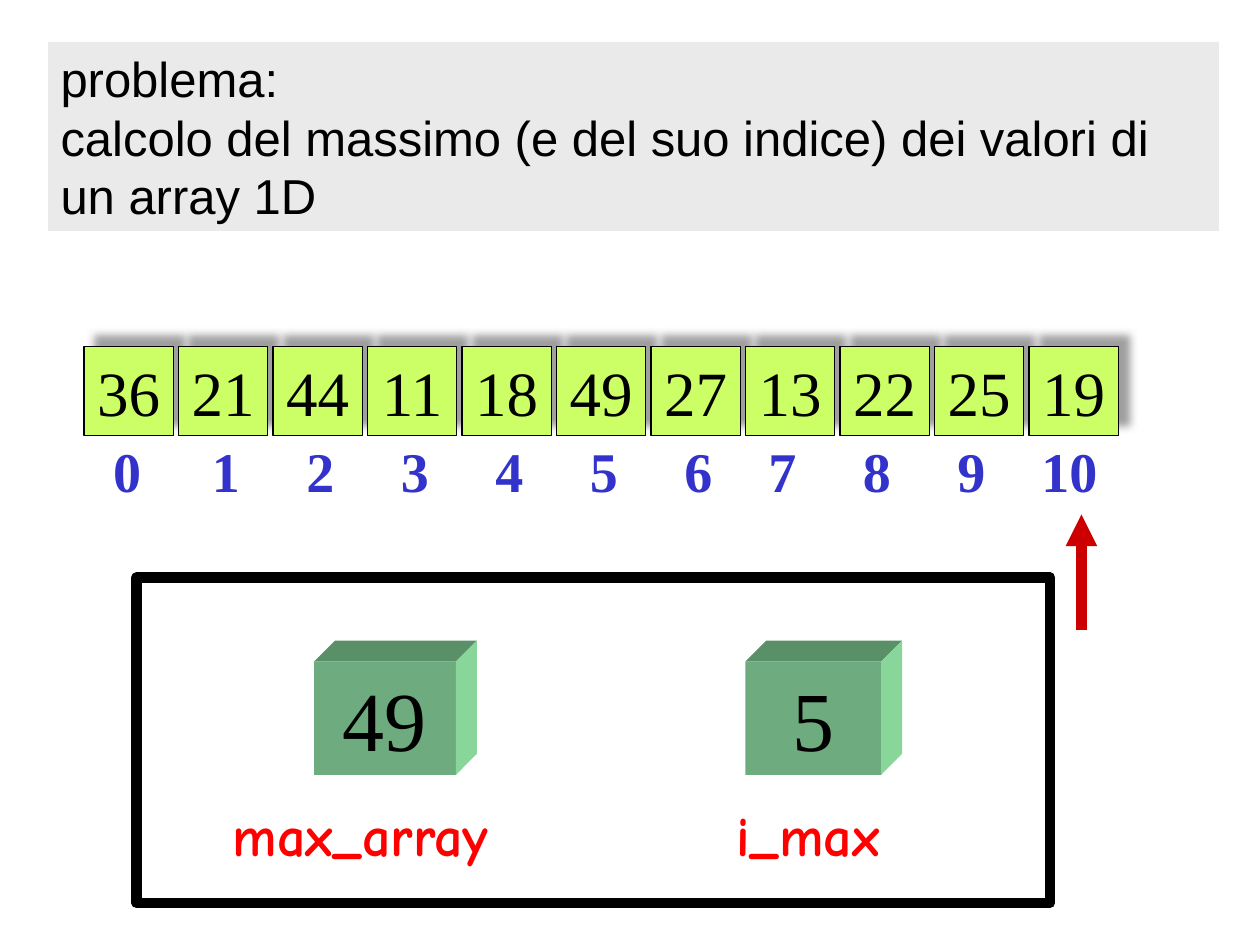
import lxml.etree
import pptx
import pptx.dml.color
import pptx.enum.shapes
import pptx.enum.text
import pptx.oxml
import pptx.oxml.ns
import pptx.util

Pt = pptx.util.Pt
RECTANGLE = pptx.enum.shapes.MSO_SHAPE.RECTANGLE
LEFT = pptx.enum.text.PP_ALIGN.LEFT
CENTER = pptx.enum.text.PP_ALIGN.CENTER
SERIF = "Times New Roman"
SHADOW = (
    '<a:effectLst xmlns:a="http://schemas.openxmlformats.org/drawingml/2006/main">'
    '<a:outerShdw blurRad="63500" dist="107950" dir="18900000" algn="ctr" rotWithShape="0">'
    '<a:srgbClr val="808080"><a:alpha val="75000"/></a:srgbClr>'
    '</a:outerShdw></a:effectLst>'
)


def color(value):
    return pptx.dml.color.RGBColor.from_string(value)


def write(shape, text, size, font, text_color, bold=False, align=LEFT, wrap=False):
    text_frame = shape.text_frame
    text_frame.text = text
    text_frame.word_wrap = wrap
    for paragraph in text_frame.paragraphs:
        paragraph.alignment = align
        for run in paragraph.runs:
            run.font.size = Pt(size)
            run.font.name = font
            run.font.bold = bold
            run.font.color.rgb = color(text_color)


presentation = pptx.Presentation()
presentation.slide_width = Pt(720)
presentation.slide_height = Pt(540)
slide = presentation.slides.add_slide(presentation.slide_layouts[6])
shapes = slide.shapes

problem = shapes.add_shape(RECTANGLE, Pt(27.5), Pt(24), Pt(669), Pt(108))
problem.shadow.inherit = False
problem.fill.solid()
problem.fill.fore_color.rgb = color("EAEAEA")
problem.line.fill.background()
write(problem, "problema:\ncalcolo del massimo (e del suo indice) dei valori di un array 1D",
      28, "Arial", "000000", wrap=True)

values = [36, 21, 44, 11, 18, 49, 27, 13, 22, 25, 19]
for index, value in enumerate(values):
    cell = shapes.add_shape(RECTANGLE, Pt(48 + 54 * index), Pt(198), Pt(51), Pt(51))
    cell.fill.solid()
    cell.fill.fore_color.rgb = color("CCFF66")
    cell.line.color.rgb = color("000000")
    cell.line.width = Pt(0.75)
    cell._element.spPr.append(pptx.oxml.parse_xml(SHADOW))
    write(cell, str(value), 36, SERIF, "000000", align=CENTER)

index_lefts = [57.6] + [60 + 54 * i for i in range(1, 7)] + [54 + 54 * i for i in range(7, 10)] + [588]
for index, left in enumerate(index_lefts):
    width = 30 if index < 10 else 46.5
    label = shapes.add_textbox(Pt(left), Pt(246), Pt(width), Pt(45.5))
    write(label, str(index), 32, SERIF, "3333CC", bold=True)

depth = 12
top, bottom = 378, 442.8
variables = [
    ("49", 179.5, 81, "max_array", 126, 180),
    ("5", 426, 77.5, "i_max", 414, 105),
]
for value, left, width, name, name_left, name_width in variables:
    right = left + width
    front = shapes.add_shape(RECTANGLE, Pt(left), Pt(top), Pt(width), Pt(bottom - top))
    upper_face = [(left, top), (left + depth, top - depth), (right + depth, top - depth), (right, top)]
    side_face = [(right, top), (right + depth, top - depth), (right + depth, bottom - depth), (right, bottom)]
    faces = [(front, "6EAB7E")]
    for points, face_color in [(upper_face, "5A9068"), (side_face, "88D69A")]:
        corners = [(Pt(x), Pt(y)) for x, y in points]
        builder = shapes.build_freeform(*corners[0])
        builder.add_line_segments(corners[1:], close=True)
        faces.append((builder.convert_to_shape(), face_color))
    for face, face_color in faces:
        face.shadow.inherit = False
        face.fill.solid()
        face.fill.fore_color.rgb = color(face_color)
        face.line.fill.background()
    write(front, value, 48, SERIF, "000000", align=CENTER)
    label = shapes.add_textbox(Pt(name_left), Pt(453.6), Pt(name_width), Pt(45.5))
    write(label, name, 32, "Comic Neue", "FF0000", bold=True)

arrow = shapes.add_connector(pptx.enum.shapes.MSO_CONNECTOR.STRAIGHT, Pt(618), Pt(360), Pt(618), Pt(294))
arrow.line.color.rgb = color("CC0000")
arrow.line.width = Pt(6)
lxml.etree.SubElement(arrow.line._get_or_add_ln(), pptx.oxml.ns.qn("a:tailEnd"), type="triangle")
lxml.etree.SubElement(arrow._element.spPr, pptx.oxml.ns.qn("a:effectLst"))

frame = shapes.add_shape(RECTANGLE, Pt(78), Pt(330), Pt(522), Pt(186))
frame.shadow.inherit = False
frame.fill.background()
frame.line.color.rgb = color("000000")
frame.line.width = Pt(6)

presentation.save("out.pptx")
